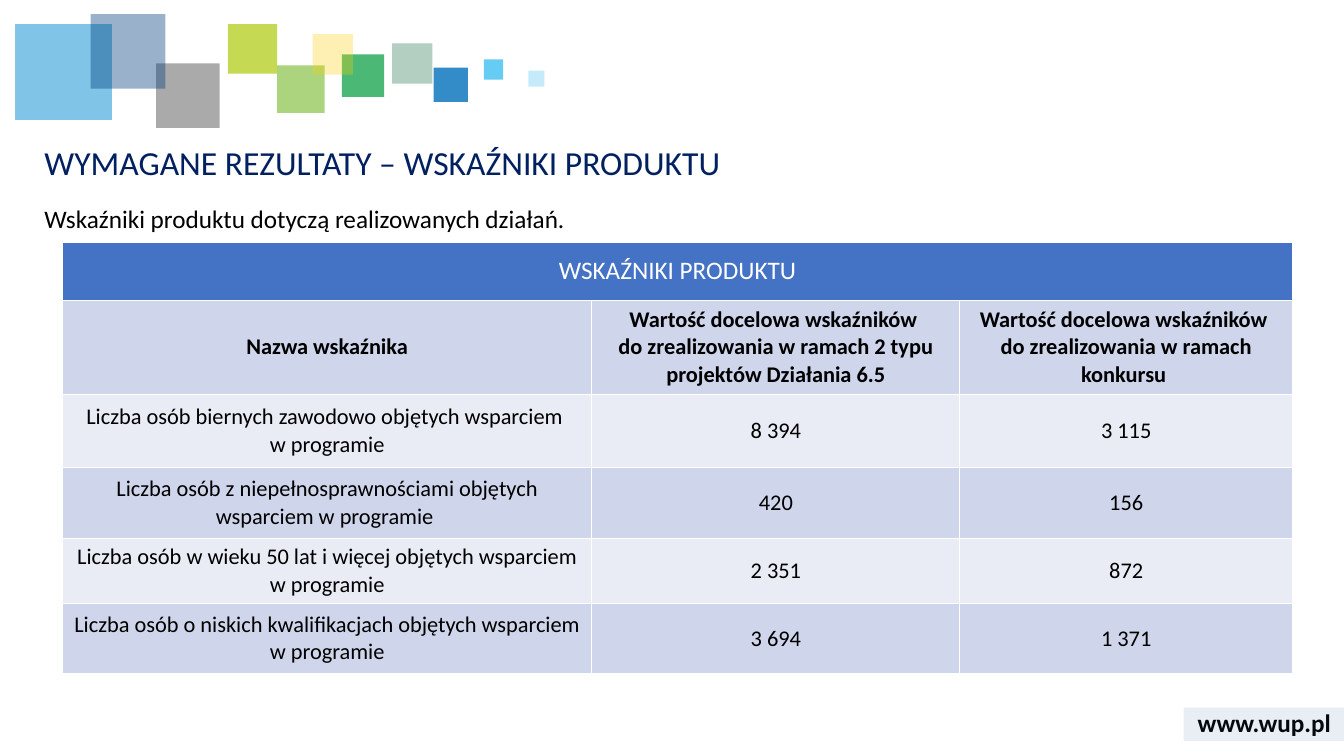
from lxml.etree import SubElement
from pptx import Presentation
from pptx.dml.color import RGBColor
from pptx.enum.shapes import MSO_SHAPE
from pptx.enum.text import MSO_ANCHOR, MSO_AUTO_SIZE, PP_ALIGN
from pptx.oxml import parse_xml
from pptx.oxml.ns import nsdecls, qn
from pptx.util import Inches, Pt

COLORS = {
    "white": "FFFFFF", "black": "000000", "title": "002060",
    "head": "4472C4", "dark": "CFD5EA", "light": "E9EBF5",
    "footer": "2F5597", "forest": "006138", "blue": "006EB9",
    "green": "009A3C", "azure": "028BD3", "leaf": "75B82A",
    "grey": "575757", "navy": "003D7C", "sky": "40C0F1",
    "lime": "AFCA0B", "yellow": "FED000",
}

# left, top, width, height, colour, opacity in percent
SQUARES = [
    (3.89, 0.43, 0.4, 0.4, "forest", 30),
    (4.3, 0.67, 0.34, 0.34, "blue", 80),
    (3.39, 0.54, 0.42, 0.42, "green", 70),
    (0.15, 0.24, 0.96, 0.95, "azure", 50),
    (2.75, 0.65, 0.47, 0.47, "leaf", 60),
    (1.55, 0.63, 0.63, 0.64, "grey", 50),
    (0.9, 0.14, 0.74, 0.74, "navy", 40),
    (4.8, 0.59, 0.19, 0.2, "sky", 80),
    (2.26, 0.24, 0.49, 0.49, "lime", 70),
    (3.1, 0.34, 0.4, 0.4, "yellow", 30),
    (5.24, 0.7, 0.16, 0.16, "sky", 30),
]

COLS = [5.25, 3.65, 3.3]
HEIGHTS = [0.58, 0.93, 0.73, 0.7, 0.65, 0.69]
# \v is a line break inside a paragraph
ROWS = [
    ["WSKAŹNIKI PRODUKTU", "", ""],
    ["Nazwa wskaźnika",
     "Wartość docelowa wskaźników \vdo zrealizowania w ramach 2 typu projektów Działania 6.5",
     "Wartość docelowa wskaźników \vdo zrealizowania w ramach konkursu "],
    ["Liczba osób biernych zawodowo objętych wsparciem \vw programie", "8 394", "3 115"],
    ["Liczba osób z niepełnosprawnościami objętych wsparciem w programie ", "420", "156"],
    ["Liczba osób w wieku 50 lat i więcej objętych wsparciem w programie", "2 351", "872"],
    ["Liczba osób o niskich kwalifikacjach objętych wsparciem w programie", "3 694", "1 371"],
]


def rgb(name):
    return RGBColor.from_string(COLORS[name])


class Deck:
    """Holds the style and the current slide."""

    font = "Calibri"

    def __init__(self):
        self.prs = Presentation()
        self.prs.slide_width = Inches(13.33)
        self.prs.slide_height = Inches(7.5)
        self.slide = self.prs.slides.add_slide(self.prs.slide_layouts[1])
        self.shapes = self.slide.shapes

    def style(self, par, size, color="black", bold=False, align=PP_ALIGN.CENTER):
        par.alignment = align
        par.font.name = self.font
        par.font.size = Pt(size)
        par.font.bold = bold
        par.font.color.rgb = rgb(color)

    def fill(self, index, text, box, size, color, anchor):
        """Move a template placeholder and write one unbulleted paragraph."""
        holder = self.slide.placeholders[index]
        holder.left, holder.top, holder.width, holder.height = map(Inches, box)
        frame = holder.text_frame
        frame.auto_size = MSO_AUTO_SIZE.NONE
        frame.vertical_anchor = anchor
        frame.text = text
        par = frame.paragraphs[0]
        props = par._p.get_or_add_pPr()
        props.set("marL", "0")
        props.set("indent", "0")
        SubElement(props, qn("a:buNone"))
        par.line_spacing = 0.9
        par.space_before = Pt(0)
        self.style(par, size, color, align=PP_ALIGN.LEFT)

    def label(self, text, box, size):
        frame = self.shapes.add_textbox(*map(Inches, box)).text_frame
        frame.word_wrap = True
        frame.vertical_anchor = MSO_ANCHOR.MIDDLE
        frame.text = text
        self.style(frame.paragraphs[0], size, bold=True)

    def rect(self, box, color, alpha):
        shape = self.shapes.add_shape(MSO_SHAPE.RECTANGLE, *map(Inches, box))
        shape.shadow.inherit = False
        shape.line.fill.background()
        shape.fill.solid()
        shape.fill.fore_color.rgb = rgb(color)
        tint = shape._element.spPr.find(".//" + qn("a:srgbClr"))
        SubElement(tint, qn("a:alpha"), val=str(alpha * 1000))

    def cell(self, cell, text, size, color, bold, back):
        props = cell._tc.get_or_add_tcPr()
        for side in "LRTB":
            props.append(parse_xml(
                f'<a:ln{side} {nsdecls("a")} w="12700"><a:solidFill>'
                f'<a:srgbClr val="{COLORS["white"]}"/></a:solidFill></a:ln{side}>'))
        cell.fill.solid()
        cell.fill.fore_color.rgb = rgb(back)
        cell.vertical_anchor = MSO_ANCHOR.MIDDLE
        par = cell.text_frame.paragraphs[0]
        if text:
            par.text = text
        self.style(par, size, color, bold)

    def table(self, left, top):
        box = map(Inches, (left, top, sum(COLS), sum(HEIGHTS)))
        table = self.shapes.add_table(len(ROWS), len(COLS), *box).table
        table.first_row = table.horz_banding = False
        for col, width in zip(table.columns, COLS):
            col.width = Inches(width)
        for r, texts in enumerate(ROWS):
            table.rows[r].height = Inches(HEIGHTS[r])
            size, color = (16, "black") if r else (18, "white")
            back = ("dark" if r % 2 else "light") if r else "head"
            for c, text in enumerate(texts):
                self.cell(table.cell(r, c), text, size, color, r == 1, back)
        table.cell(0, 0).merge(table.cell(0, len(COLS) - 1))


def main():
    deck = Deck()
    deck.label("www.wup.pl", (11.74, 6.97, 1.6, 0.4), 18)
    for *box, color, alpha in SQUARES:
        deck.rect(box, color, alpha)
    deck.rect((11.74, 7.02, 1.6, 0.33), "footer", 10)
    deck.fill(0, "WYMAGANE REZULTATY – WSKAŹNIKI PRODUKTU",
              (0.34, 1.36, 12.41, 0.55), 24, "title", MSO_ANCHOR.MIDDLE)
    deck.fill(1, "Wskaźniki produktu dotyczą realizowanych działań.",
              (0.34, 2, 12.41, 4.76), 18, "black", MSO_ANCHOR.TOP)
    deck.table(0.62, 2.4)
    deck.prs.save("out.pptx")


if __name__ == "__main__":
    main()
